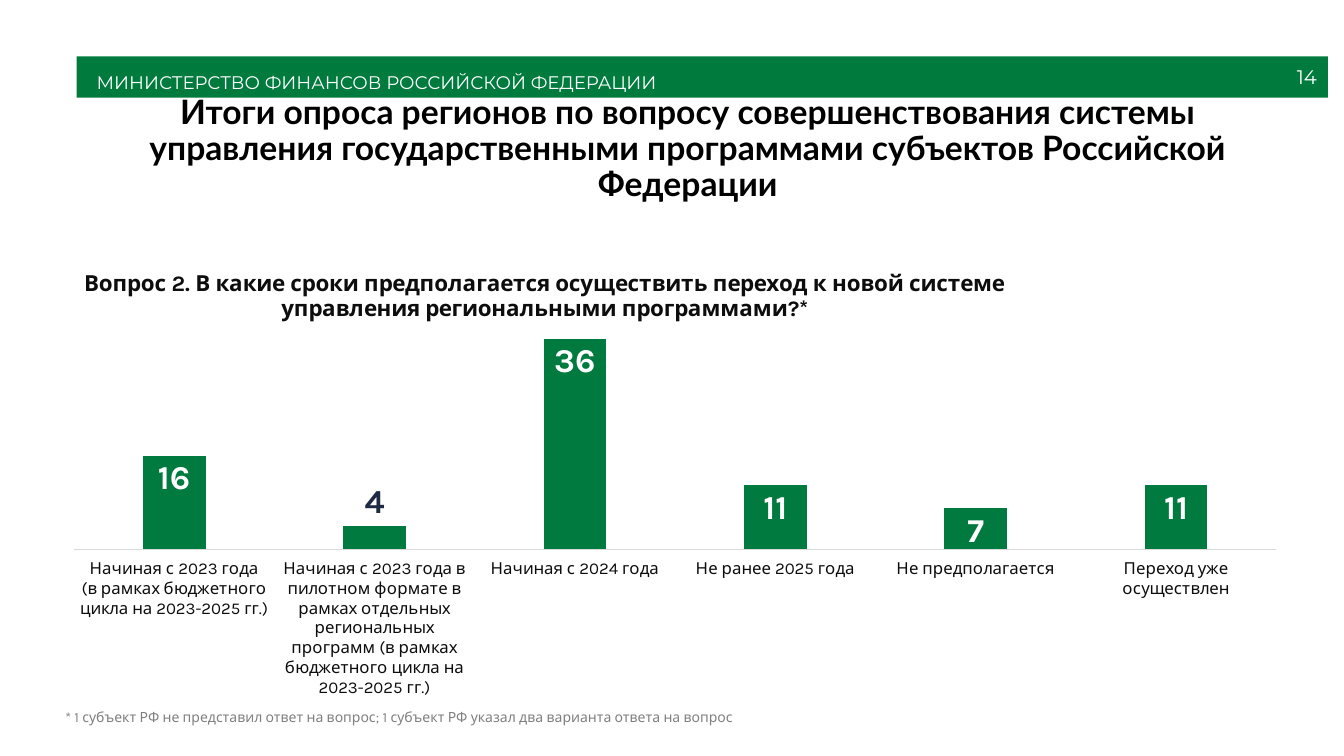
from lxml.etree import SubElement
from pptx import Presentation
from pptx.chart.data import CategoryChartData
from pptx.dml.color import RGBColor
from pptx.enum.chart import XL_CHART_TYPE as ChartType, XL_LABEL_POSITION as LabelPosition
from pptx.enum.chart import XL_TICK_LABEL_POSITION as TickLabels, XL_TICK_MARK as TickMark
from pptx.enum.shapes import MSO_SHAPE as Shape
from pptx.enum.text import MSO_ANCHOR as Anchor, PP_ALIGN as Align
from pptx.oxml.ns import qn
from pptx.util import Inches, Pt

COLORS = {"green": "007B3E", "bar": "007A3E", "white": "FFFFFF", "black": "000000",
          "ink": "0D0D0D", "grey": "808080", "axis": "D9D9D9", "navy": "1F2A44"}

ANSWERS = {
    "Начиная с 2023 года\n(в рамках бюджетного цикла на 2023-2025 гг.)": 16,
    "Начиная с 2023 года в пилотном формате в рамках отдельных региональных программ "
    "(в рамках бюджетного цикла на 2023-2025 гг.)": 4,
    "Начиная с 2024 года": 36,
    "Не ранее 2025 года": 11,
    "Не предполагается": 7,
    "Переход уже осуществлен": 11,
}


class SurveySlide:
    """Draws styled elements on one slide, placed in percent of its width and height."""

    def __init__(self, deck):
        self.column = deck.slide_width / 100
        self.row = deck.slide_height / 100
        self.page = deck.slides.add_slide(deck.slide_layouts[6])

    def area(self, left, top, width, height):
        return (round(left * self.column), round(top * self.row),
                round(width * self.column), round(height * self.row))

    def style(self, font, size, color, name="Karla", bold=False):
        font.name, font.size, font.bold = name, Pt(size), bold
        font.color.rgb = RGBColor.from_string(COLORS[color])

    def fill(self, target, color):
        target.fill.solid()
        target.fill.fore_color.rgb = RGBColor.from_string(COLORS[color])

    def put_text(self, box, text, size, color, name, bold=False,
                 align=Align.LEFT, anchor=Anchor.TOP, spacing=1.0):
        frame = box.text_frame
        frame.word_wrap, frame.vertical_anchor = True, anchor
        para = frame.paragraphs[0]
        para.text, para.alignment, para.line_spacing = text, align, spacing
        self.style(para.font, size, color, name, bold)

    def text(self, place, text, size, color, name, **options):
        box = self.page.shapes.add_textbox(*self.area(*place))
        self.put_text(box, text, size, color, name, **options)

    def banner(self, place, text):
        box = self.page.shapes.add_shape(Shape.RECTANGLE, *self.area(*place))
        box.shadow.inherit = False
        self.fill(box, "green")
        box.line.fill.background()
        frame = box.text_frame
        frame.margin_left, frame.margin_right = Inches(0.2), 0
        frame.margin_top, frame.margin_bottom = Inches(0.04), Inches(0.08)
        self.put_text(box, text, 13, "white", "Montserrat", spacing=1.5)

    def set_layout(self, parent, index, **values):
        for old in parent.findall(qn("c:layout")):
            parent.remove(old)
        layout = SubElement(parent, qn("c:layout"))
        parent.insert(index, layout)
        manual = SubElement(layout, qn("c:manualLayout"))
        for key, value in values.items():
            SubElement(manual, qn(f"c:{key}")).set("val", str(value))

    def chart(self, place, title, answers):
        data = CategoryChartData()
        data.categories = list(answers)
        data.add_series("Series 1", list(answers.values()))
        chart = self.page.shapes.add_chart(
            ChartType.COLUMN_CLUSTERED, *self.area(*place), data).chart
        chart.has_legend = False
        self.style(chart.font, 10, "ink")

        chart.has_title = True
        para = chart.chart_title.text_frame.paragraphs[0]
        para.text = title
        self.style(para.font, 16, "ink", bold=True)
        self.set_layout(chart.chart_title._element, 1,
                        xMode="edge", yMode="edge", x=0.02, y=0.03)
        self.set_layout(chart._chartSpace.chart.plotArea, 0, layoutTarget="inner",
                        xMode="edge", yMode="edge", x=0.015, y=0.144, w=0.975, h=0.531)

        answer_axis, count_axis = chart.category_axis, chart.value_axis
        answer_axis.major_tick_mark = answer_axis.minor_tick_mark = TickMark.NONE
        answer_axis.tick_label_position = TickLabels.LOW
        self.style(answer_axis.tick_labels.font, 12, "ink")
        self.fill(answer_axis.format.line, "axis")
        answer_axis.format.line.width = Pt(0.75)
        count_axis.visible = count_axis.has_major_gridlines = False
        count_axis.minimum_scale, count_axis.maximum_scale = 0, 40

        plot = chart.plots[0]
        plot.gap_width, plot.overlap, plot.vary_by_categories = 219, -27, False
        series = plot.series[0]
        self.fill(series.format, "bar")
        labels = series.data_labels
        labels.show_value, labels.position = True, LabelPosition.INSIDE_END
        self.style(labels.font, 24, "white", bold=True)
        pilot_label = series.points[1].data_label
        self.style(pilot_label.font, 24, "navy", bold=True)
        pilot_label.position = LabelPosition.OUTSIDE_END


def main():
    deck = Presentation()
    deck.slide_width, deck.slide_height = Inches(13.33), Inches(7.5)
    slide = SurveySlide(deck)
    slide.banner((5.7, 7.47, 93.1, 5.47), "МИНИСТЕРСТВО ФИНАНСОВ РОССИЙСКОЙ ФЕДЕРАЦИИ")
    slide.chart((4.13, 33.33, 91.75, 58.93),
                "Вопрос 2. В какие сроки предполагается осуществить переход к новой системе "
                "управления региональными программами?*", ANSWERS)
    slide.text((4.13, 93.07, 91.75, 3.6),
               "* 1 субъект РФ не представил ответ на вопрос; "
               "1 субъект РФ указал два варианта ответа на вопрос",
               10, "grey", "Karla", align=Align.JUSTIFY)
    slide.text((8.03, 13.2, 86.27, 13.2),
               "Итоги опроса регионов по вопросу совершенствования системы управления "
               "государственными программами субъектов Российской Федерации",
               24, "black", "Lato", bold=True, align=Align.CENTER,
               anchor=Anchor.MIDDLE, spacing=0.9)
    slide.text((76.22, 7.47, 22.5, 5.33), "14", 14, "white", "Montserrat",
               align=Align.RIGHT, anchor=Anchor.MIDDLE)
    deck.save("out.pptx")


if __name__ == "__main__":
    main()
